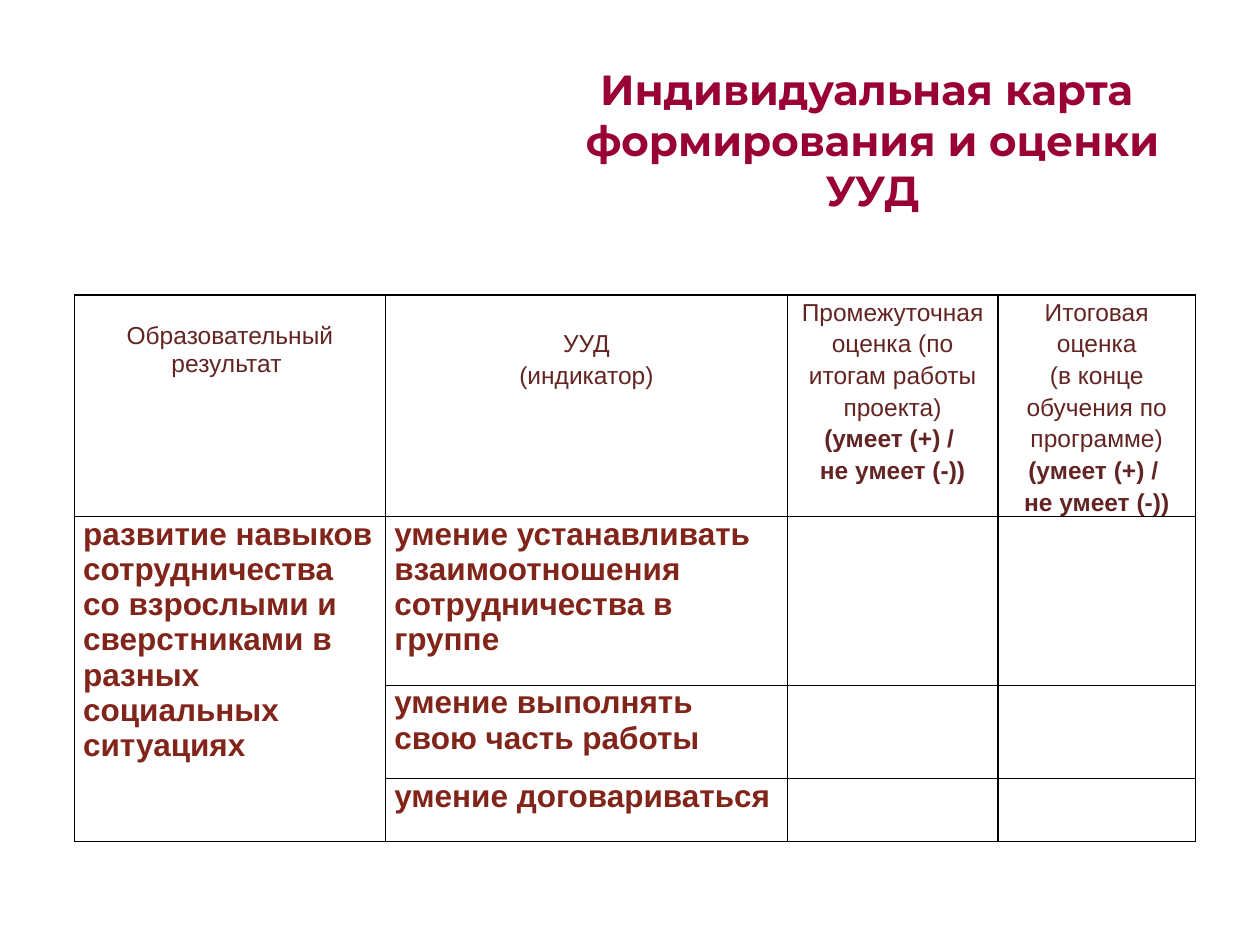
import pptx
import pptx.dml.color
import pptx.enum.text
import pptx.oxml
import pptx.oxml.ns
import pptx.util
from pptx.util import Inches, Pt

CENTER = pptx.enum.text.PP_ALIGN.CENTER
LEFT = pptx.enum.text.PP_ALIGN.LEFT
MIDDLE = pptx.enum.text.MSO_ANCHOR.MIDDLE

COLUMNS = [2.47, 3.19, 1.67, 1.57]
ROWS = [1.76, 1.34, 0.74, 0.5]
TABLE_LEFT, TABLE_TOP = 0.59, 2.34
HEADER_COLOR, BODY_COLOR, TITLE_COLOR = "632523", "81251B", "990033"

MARKS = ["(умеет (+) / ", "не умеет (-))"]
# Each header: plain lines, bold lines, space above the text, line spacing
HEADERS = [
    (["Образовательный результат "], [], 0.22, 1.0),
    (["УУД", "(индикатор)"], [], 0.25, 1.15),
    (["Промежуточная оценка (по итогам работы проекта)"], MARKS, 0, 1.15),
    (["Итоговая оценка", "(в конце обучения по программе)"], MARKS, 0, 1.15),
]
RESULT = ("развитие навыков сотрудничества со взрослыми и сверстниками "
          "в разных социальных ситуациях")
INDICATORS = [
    "умение устанавливать взаимоотношения сотрудничества в группе",
    "умение выполнять свою часть работы",
    "умение договариваться",
]


def rgb(value):
    return pptx.dml.color.RGBColor.from_string(value)


def write(paragraph, text, size, color, font="Arial", bold=False,
          align=LEFT, spacing=None):
    paragraph.text = text
    paragraph.alignment = align
    if spacing:
        paragraph.line_spacing = spacing
    for run in paragraph.runs:
        run.font.name = font
        run.font.size = Pt(size)
        run.font.bold = bold
        run.font.color.rgb = rgb(color)


def add_borders(cell, color="000000", width=1):
    properties = cell._tc.get_or_add_tcPr()
    for side in ("lnL", "lnR", "lnT", "lnB"):
        properties.append(pptx.oxml.parse_xml(
            f'<a:{side} {pptx.oxml.ns.nsdecls("a")} w="{Pt(width)}">'
            f'<a:solidFill><a:srgbClr val="{color}"/></a:solidFill></a:{side}>'))


def format_cell(cell):
    cell.margin_left = cell.margin_right = Inches(0.07)
    cell.margin_top = cell.margin_bottom = 0
    add_borders(cell)
    cell.fill.background()


def add_title(slide):
    title = slide.shapes.title
    title.left, title.top = Inches(4.21), Inches(0.36)
    title.width, title.height = Inches(5.43), Inches(1.49)
    title.text_frame.vertical_anchor = MIDDLE
    title.text_frame.word_wrap = True
    write(title.text_frame.paragraphs[0],
          "Индивидуальная карта \vформирования и оценки УУД",
          24, TITLE_COLOR, font="Montserrat", bold=True, align=CENTER)


def add_grid(slide):
    table = slide.shapes.add_table(
        len(ROWS), len(COLUMNS), Inches(TABLE_LEFT), Inches(TABLE_TOP),
        Inches(sum(COLUMNS)), Inches(sum(ROWS))).table
    table.first_row = table.horz_banding = False
    for column, width in zip(table.columns, COLUMNS):
        column.width = Inches(width)
    for row, height in zip(table.rows, ROWS):
        row.height = Inches(height)
    for cell in table.iter_cells():
        format_cell(cell)
    table.cell(1, 0).merge(table.cell(len(ROWS) - 1, 0))
    return table


def fill_header(cell, plain, marks, space_above, spacing):
    cell.margin_top = Inches(space_above)
    frame = cell.text_frame
    for index, line in enumerate(plain + marks):
        paragraph = frame.add_paragraph() if index else frame.paragraphs[0]
        write(paragraph, line, 14, HEADER_COLOR, bold=index >= len(plain),
              align=CENTER, spacing=spacing)


def fill_body(cell, text):
    write(cell.text_frame.paragraphs[0], text, 18, BODY_COLOR, bold=True)


def main():
    deck = pptx.Presentation()
    deck.slide_width, deck.slide_height = Inches(10), Inches(7.5)
    slide = deck.slides.add_slide(deck.slide_layouts[5])
    add_title(slide)
    table = add_grid(slide)
    for column, header in enumerate(HEADERS):
        fill_header(table.cell(0, column), *header)
    fill_body(table.cell(1, 0), RESULT)
    for row, indicator in enumerate(INDICATORS, start=1):
        fill_body(table.cell(row, 1), indicator)
    deck.save("out.pptx")


if __name__ == "__main__":
    main()
